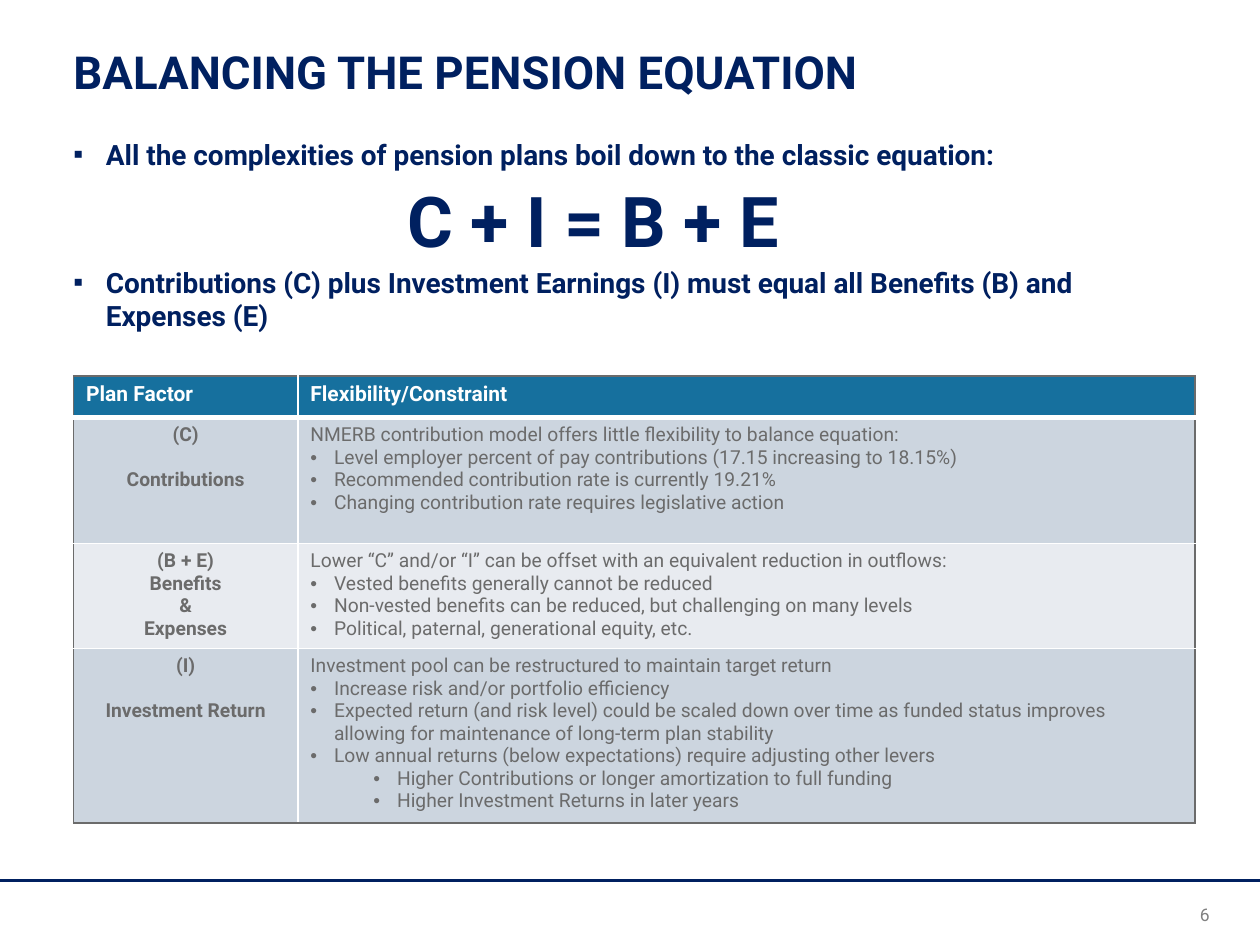
from lxml.etree import SubElement
from pptx import Presentation
from pptx.dml.color import RGBColor
from pptx.enum.shapes import MSO_CONNECTOR
from pptx.enum.text import MSO_ANCHOR, PP_ALIGN
from pptx.oxml.ns import qn
from pptx.util import Pt

NAVY, GRAY, WHITE = "002060", "6B6B6B", "FFFFFF"
TEAL, DARK, LIGHT = "16709E", "CCD5DF", "E8EBF0"
TITLE = {"size": Pt(26), "bold": True}
POINT = {"size": Pt(16), "bold": True}
SUM = {"size": Pt(40), "bold": True}
PAGE = {"size": Pt(10), "bold": False}
HEAD = {"size": Pt(12), "bold": True}
FACTOR = {"size": Pt(11), "bold": True}
NOTE = {"size": Pt(11), "bold": False}
CENTER = {"alignment": PP_ALIGN.CENTER}
GAP = {**CENTER, "space_before": Pt(12.9)}
COLS = [128.2, 512.6]
ROWS = [23.8, 72, 59.8, 97.4]

FACTORS = [
    (DARK, [("(C)", CENTER), ("Contributions", GAP)], [
        (0, "NMERB contribution model offers little flexibility to balance equation:"),
        (1, "Level employer percent of pay contributions (17.15 increasing to 18.15%)"),
        (1, "Recommended contribution rate is currently 19.21%"),
        (1, "Changing contribution rate requires legislative action"),
    ]),
    (LIGHT, [(word, CENTER) for word in ("(B + E)", "Benefits", "&", "Expenses")], [
        (0, "Lower “C” and/or “I” can be offset with an equivalent reduction in outflows:"),
        (1, "Vested benefits generally cannot be reduced"),
        (1, "Non-vested benefits can be reduced, but challenging on many levels"),
        (1, "Political, paternal, generational equity, etc."),
    ]),
    (DARK, [("(I)", CENTER), ("Investment Return", GAP)], [
        (0, "Investment pool can be restructured to maintain target return"),
        (1, "Increase risk and/or portfolio efficiency"),
        (1, "Expected return (and risk level) could be scaled down over time as funded "
            "status improves allowing for maintenance of long-term plan stability"),
        (1, "Low annual returns (below expectations) require adjusting other levers"),
        (2, "Higher Contributions or longer amortization to full funding"),
        (2, "Higher Investment Returns in later years"),
    ]),
]


def hue(code):
    return RGBColor.from_string(code)


def apply(item, values):
    for name, value in values.items():
        setattr(item, name, value)


def indent(par, left, hang=0, mark=None):
    props = par._p.get_or_add_pPr()
    props.set("marL", str(Pt(left)))
    props.set("indent", str(-Pt(hang)))
    if mark:
        SubElement(props, qn("a:buFont"), typeface="Arial")
        SubElement(props, qn("a:buChar"), char=mark)


def write(frame, index, text, font, code, layout):
    par = frame.add_paragraph() if index else frame.paragraphs[0]
    apply(par, layout)
    run = par.add_run()
    run.text = text
    apply(run.font, {"name": "Roboto", **font})
    run.font.color.rgb = hue(code)
    return par


def add_box(slide, place, pads, anchor=MSO_ANCHOR.TOP):
    frame = slide.shapes.add_textbox(*map(Pt, place)).text_frame
    sides = ("margin_left", "margin_top", "margin_right", "margin_bottom")
    apply(frame, dict(zip(sides, map(Pt, pads))))
    apply(frame, {"word_wrap": True, "vertical_anchor": anchor})
    return frame


def add_rule(slide, top):
    line = slide.shapes.add_connector(
        MSO_CONNECTOR.STRAIGHT, Pt(0), Pt(top), Pt(720), Pt(top))
    line.line.color.rgb = hue(NAVY)
    line.line.width = Pt(1.5)
    SubElement(line._element.spPr, qn("a:effectLst"))


def add_edge(cell, side, code, width):
    edge = SubElement(cell._tc.get_or_add_tcPr(), qn(f"a:ln{side}"), w=str(Pt(width)))
    fill = SubElement(edge, qn("a:solidFill"))
    SubElement(fill, qn("a:srgbClr"), val=str(hue(code)))


def style(cell, row, col, code):
    last = len(ROWS) - 1
    outer = {"L": col == 0, "R": col == 1, "T": row == 0, "B": row == last}
    thick = {"B": row == 0, "T": row == 1}
    for side, out in outer.items():
        add_edge(cell, side, GRAY if out else WHITE, 3 if thick.get(side) else 1)
    cell.fill.solid()
    cell.fill.fore_color.rgb = hue(code)


def add_grid(slide):
    place = map(Pt, (42, 214.8, sum(COLS), sum(ROWS)))
    table = slide.shapes.add_table(len(ROWS), len(COLS), *place).table
    table.horz_banding = False
    for col, width in zip(table.columns, COLS):
        col.width = Pt(width)
    for row, height in zip(table.rows, ROWS):
        row.height = Pt(height)
    for col, text in enumerate(("Plan Factor", "Flexibility/Constraint")):
        cell = table.cell(0, col)
        style(cell, 0, col, TEAL)
        write(cell.text_frame, 0, text, HEAD, WHITE, {})
    for row, (code, names, notes) in enumerate(FACTORS, 1):
        left, right = table.cell(row, 0), table.cell(row, 1)
        style(left, row, 0, code)
        style(right, row, 1, code)
        for index, (text, layout) in enumerate(names):
            write(left.text_frame, index, text, FACTOR, GRAY, layout)
        for index, (level, text) in enumerate(notes):
            par = write(right.text_frame, index, text, NOTE, GRAY,
                        {"level": max(level - 1, 0)})
            if level:
                indent(par, 13.5 + 36 * (level - 1), 13.5, "•")


def main():
    deck = Presentation()
    apply(deck, {"slide_width": Pt(720), "slide_height": Pt(540)})
    slide = deck.slides.add_slide(deck.slide_layouts[6])
    add_rule(slide, 503.3)

    page = add_box(slide, (630, 511.2, 61.2, 17.3), (7.2, 3.6, 0, 0), MSO_ANCHOR.BOTTOM)
    write(page, 0, "6", PAGE, "808080", {"alignment": PP_ALIGN.RIGHT})

    title = add_box(slide, (42, 0.7, 635.8, 59), (0, 3.6, 0, 3.6), MSO_ANCHOR.BOTTOM)
    write(title, 0, "BALANCING THE PENSION EQUATION", TITLE, NAVY,
          {"line_spacing": Pt(27)})

    body = add_box(slide, (42, 74.9, 635.8, 130.3), (0, 3.6, 0, 3.6))
    points = [
        ("All the complexities of pension plans boil down to the classic equation:", {}),
        ("Contributions (C) plus Investment Earnings (I) must equal all Benefits (B) "
         "and Expenses (E)", {"space_before": Pt(54)}),
    ]
    for index, (text, layout) in enumerate(points):
        indent(write(body, index, text, POINT, NAVY, layout), 18.5, 18.5, "▪")

    total = add_box(slide, (1.4, 97.9, 648, 41.8), (7.2, 3.6, 7.2, 3.6))
    indent(write(total, 0, "C + I = B + E", SUM, NAVY, CENTER), 27)

    add_grid(slide)
    deck.save("out.pptx")


if __name__ == "__main__":
    main()
